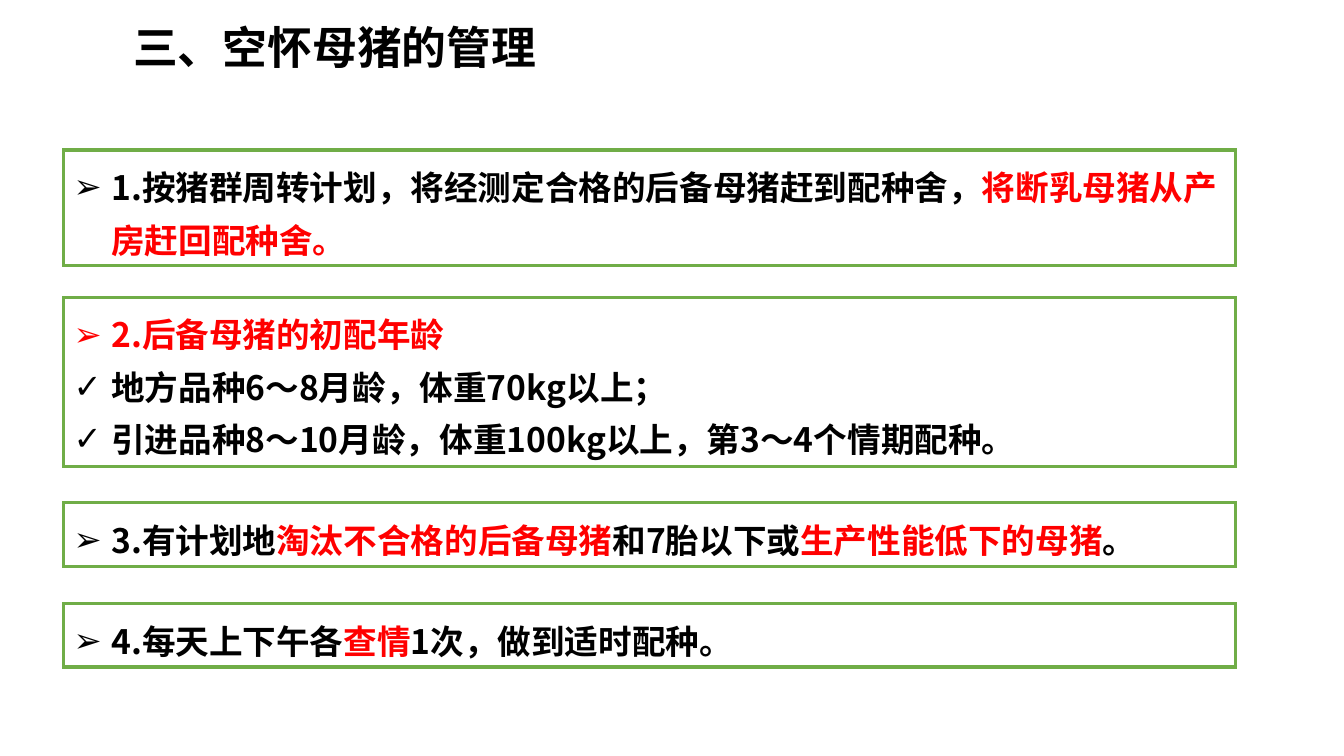
from lxml.etree import SubElement
from pptx import Presentation
from pptx.dml.color import RGBColor
from pptx.enum.text import MSO_ANCHOR, MSO_AUTO_SIZE, PP_ALIGN
from pptx.oxml.ns import qn
from pptx.util import Cm, Pt

BLACK = RGBColor(0x00, 0x00, 0x00)
RED = RGBColor(0xFF, 0x00, 0x00)
WHITE = RGBColor(0xFF, 0xFF, 0xFF)
GREEN = RGBColor(0x70, 0xAD, 0x47)

FONT = "Noto Sans CJK SC"
ARROW, CHECK = "➢", "✓"
INDENT = Cm(0.95)
BOX_LEFT, BOX_WIDTH = Cm(1.6), Cm(29.54)

# Each box: top and height in cm, then paragraphs of (bullet, runs)
BOXES = [
    (3.78, 2.92, [
        (ARROW, [("1.按猪群周转计划，将经测定合格的后备母猪赶到配种舍，", BLACK),
                 ("将断乳母猪从产房赶回配种舍。", RED)]),
    ]),
    (7.49, 4.27, [
        (ARROW, [("2.后备母猪的初配年龄", RED)]),
        (CHECK, [("地方品种6～8月龄，体重70kg以上；", BLACK)]),
        (CHECK, [("引进品种8～10月龄，体重100kg以上，第3～4个情期配种。", BLACK)]),
    ]),
    (12.67, 1.6, [
        (ARROW, [("3.有计划地", BLACK), ("淘汰不合格的后备母猪", RED),
                 ("和7胎以下或", BLACK), ("生产性能低下的母猪", RED),
                 ("。", BLACK)]),
    ]),
    (15.21, 1.6, [
        (ARROW, [("4.每天上下午各", BLACK), ("查情", RED),
                 ("1次，做到适时配种。", BLACK)]),
    ]),
]


def place(shape, left, top, width, height):
    shape.left, shape.top = left, top
    shape.width, shape.height = width, height
    shape.fill.solid()
    shape.fill.fore_color.rgb = WHITE


def set_frame(shape, wrap):
    # A fixed size keeps the full height below the last line
    frame = shape.text_frame
    frame.word_wrap = wrap
    frame.auto_size = MSO_AUTO_SIZE.NONE
    frame.vertical_anchor = MSO_ANCHOR.TOP
    return frame


def set_border(shape):
    shape.line.color.rgb = GREEN
    shape.line.width = Pt(2.25)
    # Square corners
    outline = shape._element.spPr.find(qn("a:ln"))
    SubElement(outline, qn("a:miter"), lim="800000")


def add_run(paragraph, text, size, color):
    run = paragraph.add_run()
    run.text = text
    run.font.size = Pt(size)
    run.font.bold = True
    run.font.color.rgb = color
    run.font.name = FONT
    SubElement(run.font._element, qn("a:ea"), typeface=FONT)


def format_list_item(paragraph, bullet):
    paragraph.alignment = PP_ALIGN.LEFT
    paragraph.line_spacing = 1.3
    paragraph.space_before = Pt(0)
    properties = paragraph._p.get_or_add_pPr()
    properties.set("marL", str(INDENT))
    properties.set("indent", str(-INDENT))
    SubElement(properties, qn("a:buFont"), typeface="Arial")
    SubElement(properties, qn("a:buChar"), char=bullet)


def fill_title(shape):
    place(shape, Cm(3.1), Cm(0.36), Cm(10.77), Cm(1.63))
    paragraph = set_frame(shape, wrap=False).paragraphs[0]
    paragraph.alignment = PP_ALIGN.LEFT
    add_run(paragraph, "三、空怀母猪的管理", 32, BLACK)


def fill_box(shape, top, height, items):
    place(shape, BOX_LEFT, Cm(top), BOX_WIDTH, Cm(height))
    set_border(shape)
    frame = set_frame(shape, wrap=True)
    for index, (bullet, runs) in enumerate(items):
        paragraph = frame.add_paragraph() if index else frame.paragraphs[0]
        format_list_item(paragraph, bullet)
        for text, color in runs:
            add_run(paragraph, text, 24, color)


def main():
    presentation = Presentation()
    presentation.slide_width, presentation.slide_height = Cm(33.87), Cm(19.05)

    # The Comparison layout offers a title and four body placeholders
    layout = presentation.slide_layouts.get_by_name("Comparison")
    slide = presentation.slides.add_slide(layout)
    title, *bodies = slide.placeholders

    # Heading
    fill_title(title)

    # Framed lists
    for shape, (top, height, items) in zip(bodies, BOXES):
        fill_box(shape, top, height, items)

    presentation.save("out.pptx")


if __name__ == "__main__":
    main()
